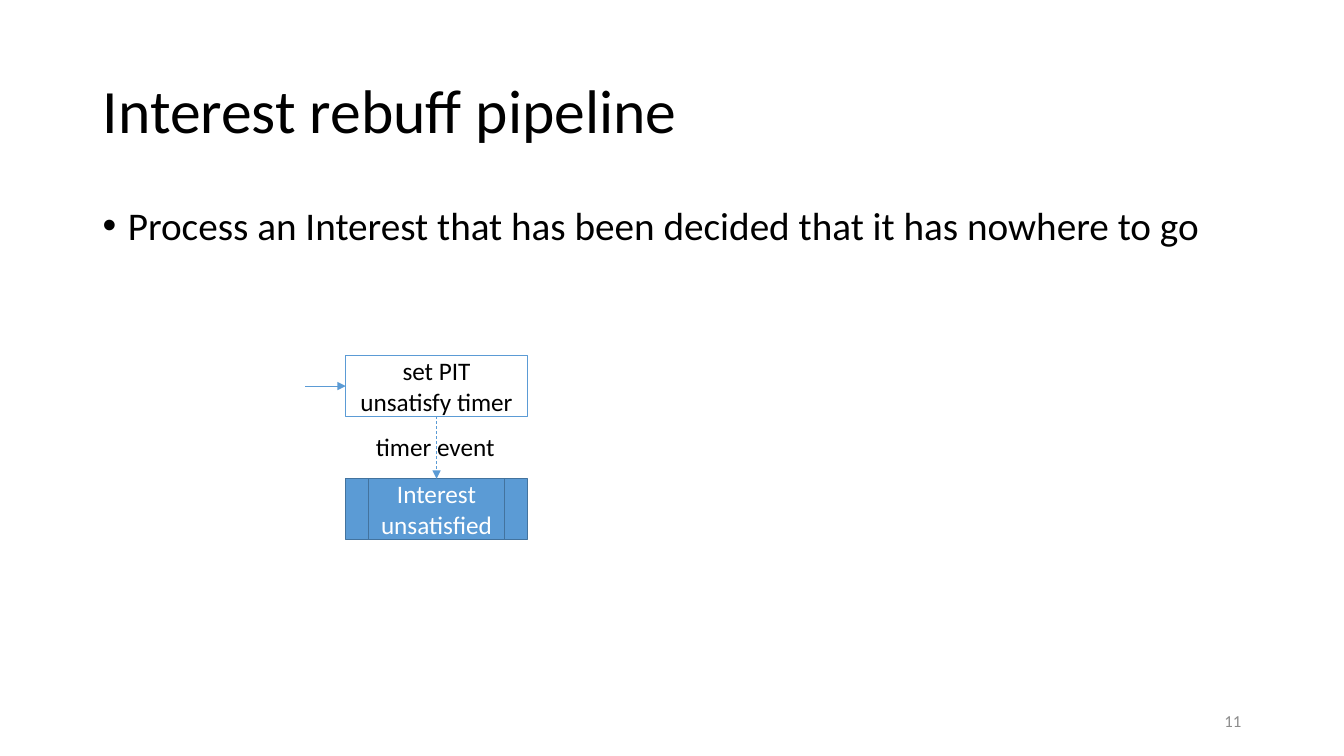
"""Build the Interest rebuff pipeline slide with its small flow chart."""
from lxml.etree import SubElement
from pptx import Presentation
from pptx.dml.color import RGBColor
from pptx.enum.dml import MSO_LINE
from pptx.enum.shapes import MSO_CONNECTOR, MSO_SHAPE
from pptx.enum.text import MSO_ANCHOR as ANCHOR, MSO_AUTO_SIZE, PP_ALIGN as ALIGN
from pptx.oxml.ns import qn
from pptx.util import Inches, Pt

BLACK = RGBColor(0x00, 0x00, 0x00)
WHITE = RGBColor(0xFF, 0xFF, 0xFF)
GRAY = RGBColor(0x8C, 0x8C, 0x8C)
BLUE = RGBColor(0x5B, 0x9B, 0xD5)
DARK_BLUE = RGBColor(0x43, 0x73, 0x9E)

W, H = 13.33, 7.5
MARGIN = 0.92
CONTENT_W = W - 2 * MARGIN
BOX_X, BOX_Y, BOX_W, BOX_H = 3.43, 3.53, 1.8, 0.6
ROW = 1.22
ENTRY_W = 0.4
LABEL_W, LABEL_H = 1.4, 0.4
NUMBER_W = 3

prs = Presentation()
prs.slide_width, prs.slide_height = Inches(W), Inches(H)
s = prs.slides.add_slide(prs.slide_layouts[6])


def write(sp, text, size, color, align=ALIGN.LEFT, anchor=ANCHOR.MIDDLE, wrap=True):
    tf = sp.text_frame
    tf.text = text
    tf.word_wrap = wrap
    tf.vertical_anchor = anchor
    p = tf.paragraphs[0]
    p.alignment = align
    font = p.runs[0].font
    font.name, font.size, font.color.rgb = "Calibri", Pt(size), color
    return p


def add_arrow(x1, y1, x2, y2):
    line = s.shapes.add_connector(
        MSO_CONNECTOR.STRAIGHT, Inches(x1), Inches(y1), Inches(x2), Inches(y2))
    line.line.color.rgb = BLUE
    line.line.width = Pt(0.5)
    SubElement(line.line._get_or_add_ln(), qn("a:tailEnd"), type="triangle")
    SubElement(line._element.spPr, qn("a:effectLst"))
    return line


title = s.shapes.add_textbox(Inches(MARGIN), Inches(0.4), Inches(CONTENT_W), Inches(1.45))
write(title, "Interest rebuff pipeline", 44, BLACK).line_spacing = 0.9

body = s.shapes.add_textbox(Inches(MARGIN), Inches(2), Inches(CONTENT_W), Inches(4.76))
p = write(body, "Process an Interest that has been decided that it has nowhere to go",
          28, BLACK, anchor=ANCHOR.TOP)
p.line_spacing = 0.9
p.space_before = Pt(10)
pPr = p._p.get_or_add_pPr()
pPr.set("marL", str(Inches(0.25)))
pPr.set("indent", str(Inches(-0.25)))
SubElement(pPr, qn("a:buFont"), typeface="Arial")
SubElement(pPr, qn("a:buChar"), char="•")

number = s.shapes.add_textbox(
    Inches(W - MARGIN - NUMBER_W), Inches(6.95), Inches(NUMBER_W), Inches(0.4))
write(number, "11", 12, GRAY, ALIGN.RIGHT)

steps = [
    (MSO_SHAPE.RECTANGLE, "set PIT unsatisfy timer", WHITE, BLUE, BLACK),
    (MSO_SHAPE.FLOWCHART_PREDEFINED_PROCESS, "Interest unsatisfied", BLUE, DARK_BLUE, WHITE),
]
boxes = []
for i, (kind, text, fill, outline, color) in enumerate(steps):
    sp = s.shapes.add_shape(
        kind, Inches(BOX_X), Inches(BOX_Y + i * ROW), Inches(BOX_W), Inches(BOX_H))
    sp.shadow.inherit = False
    sp.fill.solid()
    sp.fill.fore_color.rgb = fill
    sp.line.color.rgb = outline
    sp.line.width = Pt(1)
    write(sp, text, 18, color, ALIGN.CENTER)
    boxes.append(sp)
timer, unsatisfied = boxes

mid_x, mid_y = BOX_X + BOX_W / 2, BOX_Y + BOX_H / 2
entry = add_arrow(BOX_X - ENTRY_W, mid_y, BOX_X, mid_y)
entry.end_connect(timer, 1)

event = add_arrow(mid_x, BOX_Y + BOX_H, mid_x, BOX_Y + ROW)
event.line.dash_style = MSO_LINE.DASH
event.begin_connect(timer, 2)
event.end_connect(unsatisfied, 0)

label = s.shapes.add_textbox(
    Inches(mid_x - LABEL_W / 2), Inches(BOX_Y + BOX_H + 0.1), Inches(LABEL_W), Inches(LABEL_H))
write(label, "timer event", 18, BLACK, anchor=ANCHOR.TOP, wrap=False)
label.text_frame.auto_size = MSO_AUTO_SIZE.SHAPE_TO_FIT_TEXT

prs.save("out.pptx")
